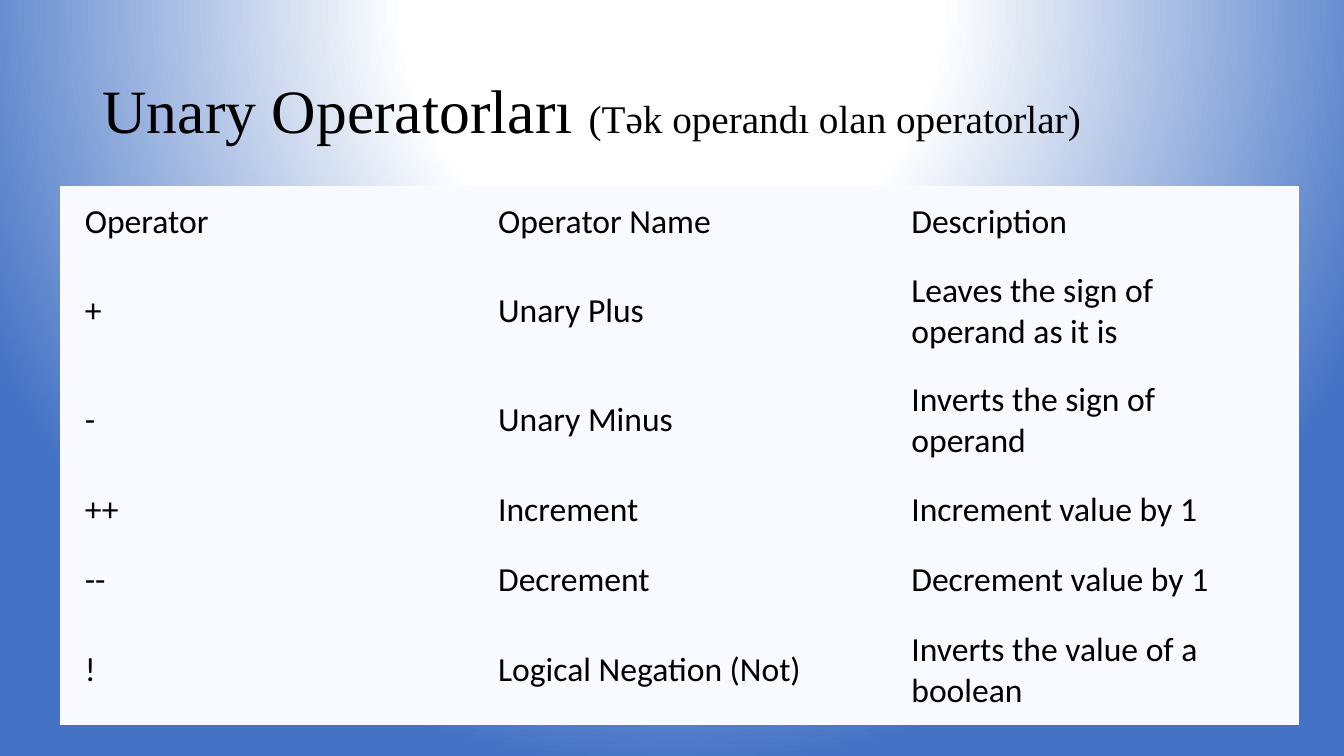
import lxml.etree
import pptx
import pptx.dml.color
import pptx.enum.text
import pptx.oxml
import pptx.oxml.ns
import pptx.util

Pt = pptx.util.Pt
RGBColor = pptx.dml.color.RGBColor

BLACK = RGBColor(0x00, 0x00, 0x00)
WHITE = RGBColor(0xFF, 0xFF, 0xFF)
BLUE = RGBColor(0x44, 0x72, 0xC4)
CELL_FILL = RGBColor(0xF8, 0xFA, 0xFF)

NO_STYLE_NO_GRID = "{2D5ABB26-0587-4C30-8999-92F81FD0307C}"
MIDDLE = pptx.enum.text.MSO_ANCHOR.MIDDLE

ONE_LINE, TWO_LINES = 50.4, 77.76
OPERATOR_ROWS = [
    (ONE_LINE, "Operator", "Operator Name", "Description"),
    (TWO_LINES, "+", "Unary Plus", "Leaves the sign of operand as it is"),
    (TWO_LINES, "-", "Unary Minus", "Inverts the sign of operand"),
    (ONE_LINE, "++", "Increment", "Increment value by 1"),
    (ONE_LINE, "--", "Decrement", "Decrement value by 1"),
    (TWO_LINES, "!", "Logical Negation (Not)", "Inverts the value of a boolean"),
]


def add_text(paragraph, text, *, size, font, color=BLACK):
    run = paragraph.add_run()
    run.text = text
    run.font.size = Pt(size)
    run.font.name = font
    run.font.color.rgb = color


def fill_background(slide):
    """Radial gradient centred above the slide, white fading to blue."""
    slide.background.fill.solid()
    properties = slide.element.xpath(".//p:bgPr")[0]
    stops = "".join(
        f'<a:gs pos="{position * 1000}"><a:srgbClr val="{color}"/></a:gs>'
        for position, color in ((0, WHITE), (35, WHITE), (100, BLUE))
    )
    gradient = pptx.oxml.parse_xml(
        f'<a:gradFill {pptx.oxml.ns.nsdecls("a")} rotWithShape="1">'
        f"<a:gsLst>{stops}</a:gsLst>"
        '<a:path path="circle">'
        '<a:fillToRect l="50000" t="-80000" r="50000" b="180000"/>'
        "</a:path></a:gradFill>"
    )
    properties.replace(properties[0], gradient)


def fill_title(slide, left, top, width, height):
    title = slide.shapes.title
    title.left, title.top = Pt(left), Pt(top)
    title.width, title.height = Pt(width), Pt(height)
    frame = title.text_frame
    frame.auto_size = pptx.enum.text.MSO_AUTO_SIZE.NONE
    frame.vertical_anchor = MIDDLE
    paragraph = frame.paragraphs[0]
    paragraph.alignment = pptx.enum.text.PP_ALIGN.LEFT
    paragraph.line_spacing = 0.9
    for text, size in (
        ("Unary Operatorları ", 44),
        ("(Tək operandı olan operatorlar)", 28),
    ):
        add_text(paragraph, text, size=size, font="Times New Roman")


def fill_cell(cell, text):
    cell.fill.solid()
    cell.fill.fore_color.rgb = CELL_FILL
    cell.vertical_anchor = MIDDLE
    cell.margin_left = cell.margin_right = Pt(18)
    cell.margin_top = cell.margin_bottom = Pt(9)
    add_text(cell.text_frame.paragraphs[0], text, size=24, font="Calibri")


def add_operator_table(slide, left, top, width):
    column_count = len(OPERATOR_ROWS[0]) - 1
    height = sum(row[0] for row in OPERATOR_ROWS)
    table = slide.shapes.add_table(
        len(OPERATOR_ROWS), column_count, Pt(left), Pt(top), Pt(width), Pt(height)
    ).table
    table.first_row = table.horz_banding = False
    style = table._tbl.tblPr.find(pptx.oxml.ns.qn("a:tableStyleId"))
    style.text = NO_STYLE_NO_GRID
    for column in table.columns:
        column.width = Pt(width / column_count)
    for row, (row_height, *texts) in zip(table.rows, OPERATOR_ROWS):
        row.height = Pt(row_height)
        for cell, text in zip(row.cells, texts):
            fill_cell(cell, text)


def build_operator_slide(presentation):
    title_only = presentation.slide_layouts[5]
    slide = presentation.slides.add_slide(title_only)
    fill_background(slide)
    fill_title(slide, 66, 28.75, 828, 104.4)
    add_operator_table(slide, 42.6, 133.1, 885.6)


def main():
    presentation = pptx.Presentation()
    presentation.slide_width = Pt(960)
    presentation.slide_height = Pt(540)
    build_operator_slide(presentation)
    presentation.save("out.pptx")


if __name__ == "__main__":
    main()
